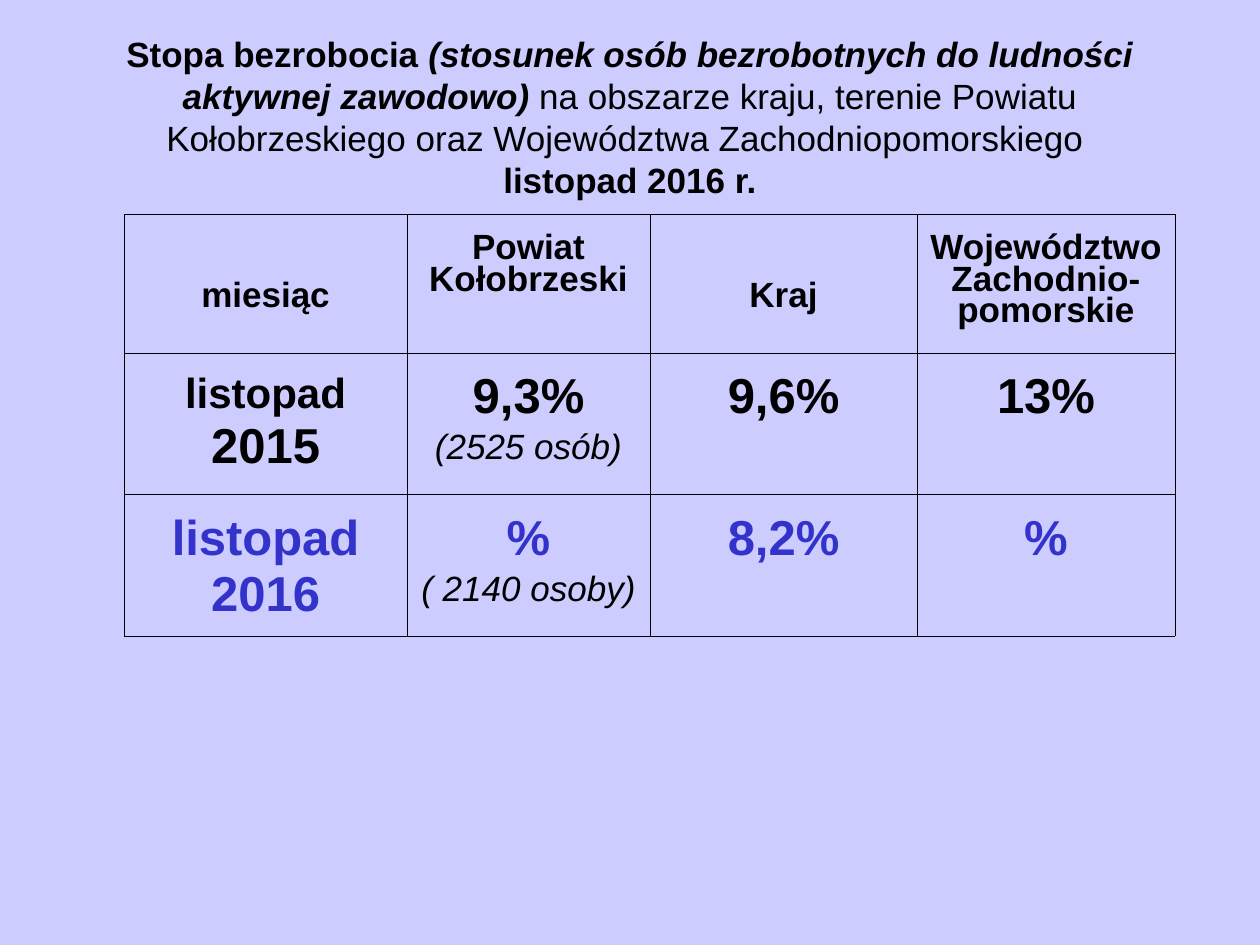
from dataclasses import dataclass

from lxml.etree import SubElement
from pptx import Presentation
from pptx.dml.color import RGBColor
from pptx.enum.text import MSO_ANCHOR, MSO_AUTO_SIZE, PP_ALIGN
from pptx.oxml.ns import qn
from pptx.util import Pt


@dataclass(frozen=True)
class Theme:
    font: str = "Arial"
    background: str = "CCCCFF"
    ink: str = "000000"
    accent: str = "3333CC"
    small: int = 20
    medium: int = 24
    large: int = 28
    inner_line: float = 0.11
    outer_line: float = 0.23


@dataclass(frozen=True)
class Entry:
    """One line of text in a table cell."""
    text: str
    size: int
    color: str = Theme.ink
    bold: bool = True
    italic: bool = False


class SlideBuilder:
    def __init__(self, slide, theme):
        self.slide, self.theme = slide, theme
        fill = slide.background.fill
        fill.solid()
        fill.fore_color.rgb = RGBColor.from_string(theme.background)

    def style(self, run, size, color, bold, italic):
        font = run.font
        font.name, font.size = self.theme.font, Pt(size)
        font.bold, font.italic = bold, italic
        font.color.rgb = RGBColor.from_string(color)

    def title(self, box, parts, last_line):
        heading = self.slide.shapes.title
        heading.left, heading.top, heading.width, heading.height = map(Pt, box)
        frame = heading.text_frame
        frame.auto_size = MSO_AUTO_SIZE.NONE
        frame.vertical_anchor = MSO_ANCHOR.MIDDLE
        line = frame.paragraphs[0]
        line.alignment = PP_ALIGN.CENTER
        size, ink = self.theme.small, self.theme.ink
        for text, bold, italic in parts:
            run = line.add_run()
            run.text = text
            self.style(run, size, ink, bold, italic)
        # The line break takes the title size too
        line.add_line_break()
        SubElement(line._p[-1], qn("a:rPr"), sz=str(size * 100))
        run = line.add_run()
        run.text = last_line
        self.style(run, size, ink, True, False)

    def table(self, left, top, widths, heights, rows, insets, spacings):
        grid = self.slide.shapes.add_table(
            len(heights), len(widths), Pt(left), Pt(top),
            Pt(sum(widths)), Pt(sum(heights))).table
        for column, width in zip(grid.columns, widths):
            column.width = Pt(width)
        for r, (height, entries) in enumerate(zip(heights, rows)):
            grid.rows[r].height = Pt(height)
            for c, lines in enumerate(entries):
                cell = grid.cell(r, c)
                self.cell(cell, lines, insets[r][c], spacings[r])
                self.borders(cell, {
                    "L": c == 0, "R": c == len(widths) - 1,
                    "T": r == 0, "B": False})
                cell.fill.background()

    def cell(self, cell, lines, inset, spacing):
        cell.margin_top = Pt(inset)
        cell.text_frame.text = "\n".join(entry.text for entry in lines)
        for line, entry in zip(cell.text_frame.paragraphs, lines):
            line.alignment = PP_ALIGN.CENTER
            line.line_spacing = 0.81
            line.space_before = Pt(spacing)
            self.style(line.runs[0], entry.size, entry.color,
                       entry.bold, entry.italic)

    def borders(self, cell, outer_sides):
        properties = cell._tc.get_or_add_tcPr()
        for side, outer in outer_sides.items():
            width = self.theme.outer_line if outer else self.theme.inner_line
            edge = SubElement(properties, qn(f"a:ln{side}"), w=str(Pt(width)))
            fill = SubElement(edge, qn("a:solidFill"))
            SubElement(fill, qn("a:srgbClr"), val=self.theme.ink)


def main():
    theme = Theme()
    deck = Presentation()
    deck.slide_width, deck.slide_height = Pt(720), Pt(540)
    builder = SlideBuilder(deck.slides.add_slide(deck.slide_layouts[5]), theme)

    # Title: text, bold, italic
    builder.title((36, 21.6, 648, 90), [
        ("Stopa bezrobocia ", True, False),
        ("(stosunek osób bezrobotnych do ludności aktywnej zawodowo)",
         True, True),
        (" na obszarze kraju, terenie Powiatu Kołobrzeskiego oraz "
         "Województwa Zachodniopomorskiego ", False, False),
    ], "listopad 2016 r.")

    # Unemployment rates by month and area
    def persons(text):
        return Entry(text, theme.small, bold=False, italic=True)

    def current(text):
        return Entry(text, theme.large, theme.accent)

    header = [[Entry(name, theme.small)] for name in (
        "miesiąc", "Powiat Kołobrzeski", "Kraj",
        "Województwo Zachodnio-pomorskie")]
    november_2015 = [
        [Entry("listopad", theme.medium), Entry("2015", theme.large)],
        [Entry("9,3%", theme.large), persons("(2525 osób)")],
        [Entry("9,6%", theme.large)],
        [Entry("13%", theme.large)],
    ]
    november_2016 = [
        [current("listopad"), current("2016")],
        [current("%"), persons("( 2140 osoby) ")],
        [current("8,2%")],
        [current("%")],
    ]
    # Single-line headings sit one line lower than the long ones
    long_inset, short_inset, body_inset = 11.5, 39, 14.4
    builder.table(
        left=71, top=122.4,
        widths=(161.5, 139, 152.5, 147.5), heights=(79.2, 81, 81),
        rows=(header, november_2015, november_2016),
        insets=([short_inset, long_inset] * 2,
                [body_inset] * 4, [body_inset] * 4),
        spacings=(5, 7, 7))

    deck.save("out.pptx")


if __name__ == "__main__":
    main()
